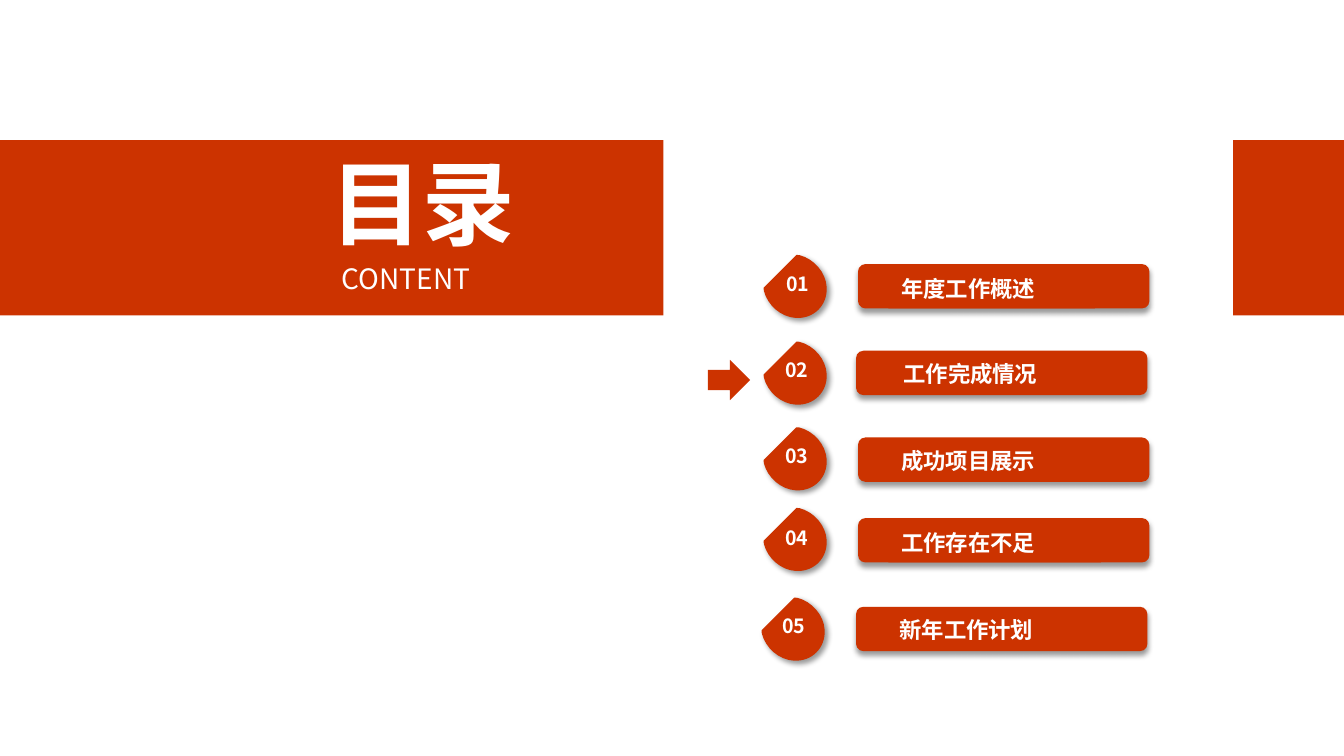
from lxml import etree
from pptx import Presentation
from pptx.dml.color import RGBColor
from pptx.enum.shapes import MSO_SHAPE
from pptx.enum.text import MSO_ANCHOR, PP_ALIGN
from pptx.oxml.ns import qn
from pptx.util import Inches, Pt

RECTANGLE = MSO_SHAPE.RECTANGLE
ROUNDED = MSO_SHAPE.ROUNDED_RECTANGLE
RIGHT_ARROW = MSO_SHAPE.RIGHT_ARROW
MIDDLE = MSO_ANCHOR.MIDDLE
LEFT = PP_ALIGN.LEFT

FONT = "Noto Sans CJK SC"
COLORS = {"red": "CC3300", "white": "FFFFFF", "shadow": "000000"}

# Drop outline in thousandths of an inch, before its turn by 135 degrees:
# one point is a straight line, three points are a cubic curve
DROP_WIDTH, DROP_HEIGHT = 590, 540
DROP_START = (80, 97)
DROP_SEGMENTS = [
    [(-20, 210), (-30, 385), (45, 514)],
    [(65, 537)],
    [(525, 537)],
    [(545, 514)],
    [(620, 385), (610, 210), (510, 97)],
    [(390, -35), (200, -35), DROP_START],
]

# number, drop left and top, number box (left, top, width),
# heading, bar left and top, heading box (left, top, width)
ITEMS = [
    ("01", 7.63, 2.61, (7.70, 2.64, 0.54), "年度工作概述", 8.51, 2.62, (8.81, 2.66, 2.05)),
    ("02", 7.63, 3.47, (7.69, 3.50, 0.52), "工作完成情况", 8.49, 3.48, (8.83, 3.51, 2.05)),
    ("03", 7.63, 4.32, (7.69, 4.35, 0.52), "成功项目展示", 8.51, 4.34, (8.81, 4.37, 2.11)),
    ("04", 7.63, 5.12, (7.69, 5.16, 0.52), "工作存在不足", 8.51, 5.14, (8.81, 5.18, 2.11)),
    ("05", 7.61, 6.01, (7.66, 6.04, 0.57), "新年工作计划", 8.49, 6.02, (8.79, 6.05, 2.11)),
]


def paint(shape, shadow_angle=None):
    """Fill the shape red without a line, with a soft shadow if an angle is given."""
    shape.fill.solid()
    shape.fill.fore_color.rgb = RGBColor.from_string(COLORS["red"])
    shape.line.fill.background()
    shape.shadow.inherit = False
    if shadow_angle is not None:
        effects = shape._element.spPr.find(qn("a:effectLst"))
        shadow = etree.SubElement(
            effects, qn("a:outerShdw"), blurRad=str(Pt(4)), dist=str(Pt(3)),
            dir=str(shadow_angle * 60000), algn="ctr", rotWithShape="0")
        color = etree.SubElement(shadow, qn("a:srgbClr"), val=COLORS["shadow"])
        etree.SubElement(color, qn("a:alpha"), val="40000")


def write(shape, text, size, bold=True, margins=(0.1, 0.05)):
    frame = shape.text_frame
    frame.word_wrap = True
    frame.vertical_anchor = MIDDLE
    frame.margin_left = frame.margin_right = Inches(margins[0])
    frame.margin_top = frame.margin_bottom = Inches(margins[1])
    paragraph = frame.paragraphs[0]
    paragraph.alignment = LEFT
    run = paragraph.add_run()
    run.text = text
    run.font.name = FONT
    run.font.size = Pt(size)
    run.font.bold = bold
    run.font.color.rgb = RGBColor.from_string(COLORS["white"])
    etree.SubElement(run.font._element, qn("a:ea"), typeface=FONT)


presentation = Presentation()
presentation.slide_width = Inches(13.33)
presentation.slide_height = Inches(7.5)
slide = presentation.slides.add_slide(presentation.slide_layouts[6])

# Red bands on both sides
for left, width in [(-0.01, 6.59), (12.23, 1.1)]:
    band = slide.shapes.add_shape(
        RECTANGLE, Inches(left), Inches(1.39), Inches(width), Inches(1.74))
    paint(band)

# Title
for text, left, top, width, height, size, bold in [
    ("CONTENT", 3.29, 2.54, 1.78, 0.44, 20, False),
    ("目录", 3.18, 1.39, 2.74, 1.21, 66, True),
]:
    title = slide.shapes.add_shape(
        RECTANGLE, Inches(left), Inches(top), Inches(width), Inches(height))
    paint(title)
    write(title, text, size, bold)

# Numbered entries
for number, drop_left, drop_top, number_box, heading, bar_left, bar_top, heading_box in ITEMS:
    badge = slide.shapes.add_group_shape()
    builder = badge.shapes.build_freeform(*DROP_START, scale=Inches(0.001))
    builder.add_line_segments([segment[-1] for segment in DROP_SEGMENTS])
    drop = builder.convert_to_shape()
    outline = next(drop._element.iter(qn("a:path")))
    outline.set("w", str(DROP_WIDTH))
    outline.set("h", str(DROP_HEIGHT))
    for child in list(outline):
        outline.remove(child)
    for tag, points in (
        [("a:moveTo", [DROP_START])]
        + [("a:lnTo" if len(segment) == 1 else "a:cubicBezTo", segment)
           for segment in DROP_SEGMENTS]
        + [("a:close", [])]
    ):
        command = etree.SubElement(outline, qn(tag))
        for x, y in points:
            etree.SubElement(command, qn("a:pt"), x=str(x), y=str(y))
    drop.left, drop.top = Inches(drop_left), Inches(drop_top)
    drop.width, drop.height = Inches(DROP_WIDTH / 1000), Inches(DROP_HEIGHT / 1000)
    drop.rotation = 135
    paint(drop, shadow_angle=45)
    left, top, width = number_box
    number_text = badge.shapes.add_textbox(
        Inches(left), Inches(top), Inches(width), Inches(0.34))
    write(number_text, number, 14)

    bar = slide.shapes.add_shape(
        ROUNDED, Inches(bar_left), Inches(bar_top), Inches(2.89), Inches(0.44))
    paint(bar, shadow_angle=90)
    left, top, width = heading_box
    label = slide.shapes.add_shape(
        RECTANGLE, Inches(left), Inches(top), Inches(width), Inches(0.4))
    paint(label)
    write(label, heading, 16, margins=(0.13, 0.07))

# Arrow marking the current entry
arrow = slide.shapes.add_shape(
    RIGHT_ARROW, Inches(7.02), Inches(3.57), Inches(0.42), Inches(0.4))
paint(arrow)

presentation.save("out.pptx")
